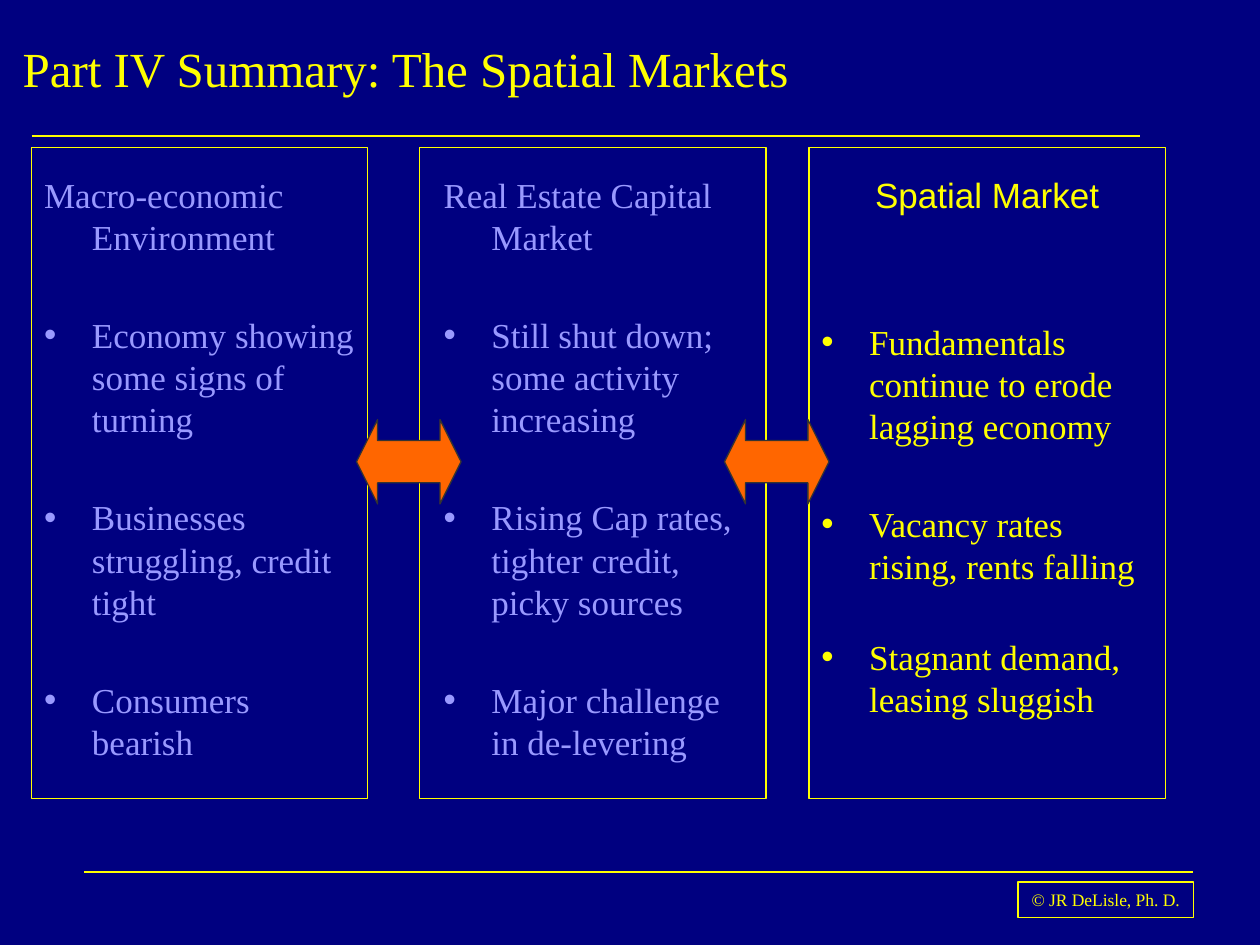
from lxml import etree
from pptx import Presentation
from pptx.dml.color import RGBColor
from pptx.enum.shapes import MSO_CONNECTOR, MSO_SHAPE
from pptx.enum.text import MSO_ANCHOR, MSO_AUTO_SIZE, PP_ALIGN
from pptx.oxml.ns import qn
from pptx.util import Inches, Pt

RECT, ARROW = MSO_SHAPE.RECTANGLE, MSO_SHAPE.LEFT_RIGHT_ARROW
LEFT, CENTER = PP_ALIGN.LEFT, PP_ALIGN.CENTER
SERIF, SANS = "Times New Roman", "Arial"
COLORS = {"back": "000080", "yellow": "FFFF00", "lilac": "9999FF",
          "orange": "FF6600", "edge": "333333"}

# Content
TITLE = "Part IV Summary: The Spatial Markets"
CREDIT = "© JR DeLisle, Ph. D."
# Each item: text, space before in points
PANELS = [
    {"head": "Macro-economic Environment", "font": SERIF, "align": LEFT,
     "color": "lilac", "frame": (0.25, 2.67), "text": (0.25, 2.67),
     "items": [("Economy showing some signs of turning", 32),
               ("Businesses struggling, credit tight", 32),
               ("Consumers bearish", 32)]},
    {"head": "Real Estate Capital Market", "font": SERIF, "align": LEFT,
     "color": "lilac", "frame": (3.33, 2.75), "text": (3.42, 2.58),
     "items": [("Still shut down; some activity increasing", 32),
               ("Rising Cap rates, tighter credit, picky sources", 32),
               ("Major challenge in de-levering", 32)]},
    {"head": "Spatial Market", "font": SANS, "align": CENTER,
     "color": "yellow", "frame": (6.42, 2.83), "text": (6.42, 2.83),
     "items": [("Fundamentals continue to erode lagging economy", 60),
               ("Vacancy rates rising, rents falling", 32),
               ("Stagnant demand, leasing sluggish", 28)]},
]
RULES = [(0.25, 1.08), (0.67, 6.92)]
RULE_W = 8.8
ARROWS = [2.83, 5.75]
FRAME_TOP, TEXT_TOP, PANEL_H = 1.17, 1.33, 5.17


def rgb(name):
    return RGBColor.from_string(COLORS[name])


def place(shape, *box):
    shape.left, shape.top, shape.width, shape.height = map(Inches, box)


def style(para, size, font, color):
    for run in para.runs:
        run.font.size = Pt(size)
        run.font.name = font
        run.font.color.rgb = rgb(color)


def add_box(slide, kind, box, line, fill=None):
    shape = slide.shapes.add_shape(kind, *map(Inches, box))
    shape.shadow.inherit = False
    shape.line.color.rgb = rgb(line)
    shape.line.width = Pt(0.75)
    if fill:
        shape.fill.solid()
        shape.fill.fore_color.rgb = rgb(fill)
    else:
        shape.fill.background()
    return shape


def add_rule(slide, x, y):
    line = slide.shapes.add_connector(
        MSO_CONNECTOR.STRAIGHT, Inches(x), Inches(y), Inches(x + RULE_W), Inches(y))
    line.line.color.rgb = rgb("yellow")
    line.line.width = Pt(1.25)
    etree.SubElement(line._element.spPr, qn("a:effectLst"))


def add_para(para, text, gap, font, color, align, bullet):
    para.text = text
    props = para._p.get_or_add_pPr()
    props.set("marL", str(Inches(0.38)))
    props.set("indent", str(-Inches(0.38)))
    if bullet:
        etree.SubElement(props, qn("a:buFont")).set("typeface", SANS)
        etree.SubElement(props, qn("a:buChar")).set("char", "•")
    else:
        etree.SubElement(props, qn("a:buNone"))
    para.alignment = align
    para.line_spacing = Pt(24)
    para.space_before = Pt(gap)
    style(para, 20, font, color)


def fill_panel(shape, panel):
    place(shape, panel["text"][0], TEXT_TOP, panel["text"][1], PANEL_H)
    frame = shape.text_frame
    frame.word_wrap = True
    frame.auto_size = MSO_AUTO_SIZE.NONE
    frame.vertical_anchor = MSO_ANCHOR.TOP
    color = panel["color"]
    add_para(frame.paragraphs[0], panel["head"], 0, panel["font"], color,
             panel["align"], False)
    for text, gap in panel["items"]:
        add_para(frame.add_paragraph(), text, gap, SERIF, color, LEFT, True)


def main():
    deck = Presentation()
    deck.slide_width, deck.slide_height = Inches(10), Inches(7.5)
    slide = deck.slides.add_slide(deck.slide_layouts[3])
    slide.background.fill.solid()
    slide.background.fill.fore_color.rgb = rgb("back")

    # Title
    title = slide.shapes.title
    place(title, 0.08, 0.25, 7.75, 0.58)
    frame = title.text_frame
    frame.text = TITLE
    frame.auto_size = MSO_AUTO_SIZE.NONE
    frame.vertical_anchor = MSO_ANCHOR.MIDDLE
    frame.paragraphs[0].alignment = LEFT
    style(frame.paragraphs[0], 28, SERIF, "yellow")

    # Rules and credit
    for x, y in RULES:
        add_rule(slide, x, y)
    credit = add_box(slide, RECT, (8.08, 7, 1.39, 0.28), "yellow")
    credit.text_frame.text = CREDIT
    credit.text_frame.word_wrap = False
    credit.text_frame.paragraphs[0].alignment = CENTER
    style(credit.text_frame.paragraphs[0], 10, SERIF, "yellow")

    # Panels: two body placeholders and a text box
    for panel in PANELS:
        x, width = panel["frame"]
        add_box(slide, RECT, (x, FRAME_TOP, width, PANEL_H), "yellow")
    holders = [slide.placeholders[1], slide.placeholders[2],
               slide.shapes.add_textbox(0, 0, 0, 0)]
    for shape, panel in zip(holders, PANELS):
        fill_panel(shape, panel)

    # Arrows between panels
    for x in ARROWS:
        arrow = add_box(slide, ARROW, (x, 3.33, 0.83, 0.67), "edge", "orange")
        arrow.adjustments[0], arrow.adjustments[1] = 0.5, 0.25

    deck.save("out.pptx")


if __name__ == "__main__":
    main()
